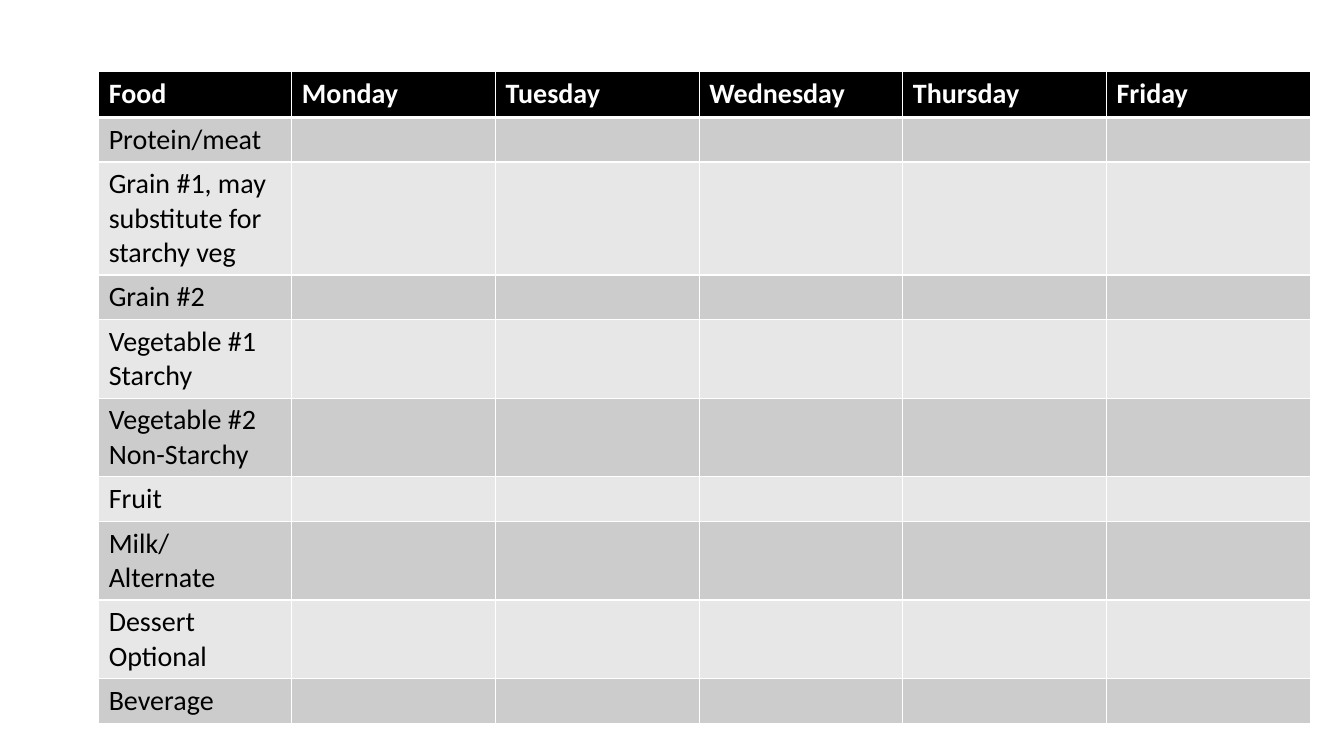
from lxml.etree import SubElement
from pptx import Presentation
from pptx.dml.color import RGBColor
from pptx.oxml.ns import qn
from pptx.util import Emu, Pt

EMU_PER_PX = 9525
DAYS = ["Monday", "Tuesday", "Wednesday", "Thursday", "Friday"]
FOODS = [
    (["Protein/meat"], 42),
    (["Grain #1, may substitute for starchy veg"], 107),
    (["Grain #2"], 42),
    (["Vegetable #1", "Starchy"], 75),
    (["Vegetable #2", "Non-Starchy"], 75),
    (["Fruit"], 42),
    (["Milk/", "Alternate"], 75),
    (["Dessert", "Optional"], 75),
    (["Beverage"], 42),
]


def px(length):
    return Emu(length * EMU_PER_PX)


def color(value):
    return RGBColor.from_string(value)


class MenuSlide:
    font_name = "Calibri"
    font_size = 20
    white, black = "FFFFFF", "000000"
    bands = ["CCCCCC", "E7E7E7"]

    def __init__(self, slide):
        self.slide = slide

    def add_lines(self, cell, lines, ink, bold):
        frame = cell.text_frame
        for index, line in enumerate(lines):
            paragraph = frame.add_paragraph() if index else frame.paragraphs[0]
            run = paragraph.add_run()
            run.text = line
            font = run.font
            font.name, font.size, font.bold = self.font_name, Pt(self.font_size), bold
            font.color.rgb = color(ink)

    def border(self, cell, top, bottom):
        properties = cell._tc.get_or_add_tcPr()
        for side, width in {"L": 1, "R": 1, "T": top, "B": bottom}.items():
            line = SubElement(properties, qn(f"a:ln{side}"), w=str(Pt(width)))
            fill = SubElement(line, qn("a:solidFill"))
            SubElement(fill, qn("a:srgbClr"), val=self.white)

    def table(self, left, top, column_widths, rows):
        heights = [height for _, height in rows]
        frame = self.slide.shapes.add_table(
            len(rows), len(column_widths), px(left), px(top),
            px(sum(column_widths)), px(sum(heights)))
        table = frame.table
        for column, width in zip(table.columns, column_widths):
            column.width = px(width)
        for index, (texts, height) in enumerate(rows):
            table.rows[index].height = px(height)
            header = index == 0
            background = self.black if header else self.bands[(index - 1) % 2]
            for position in range(len(column_widths)):
                cell = table.cell(index, position)
                self.border(cell, 3 if index == 1 else 1, 3 if header else 1)
                cell.fill.solid()
                cell.fill.fore_color.rgb = color(background)
                if position < len(texts):
                    self.add_lines(cell, texts[position],
                                   self.white if header else self.black, header)


def main():
    presentation = Presentation()
    presentation.slide_width, presentation.slide_height = px(1280), px(720)
    menu = MenuSlide(presentation.slides.add_slide(presentation.slide_layouts[6]))
    header = [[title] for title in ["Food", *DAYS]]
    rows = [(header, 44)] + [([lines], height) for lines, height in FOODS]
    menu.table(94, 68, [184] + [194] * len(DAYS), rows)
    presentation.save("out.pptx")


if __name__ == "__main__":
    main()
